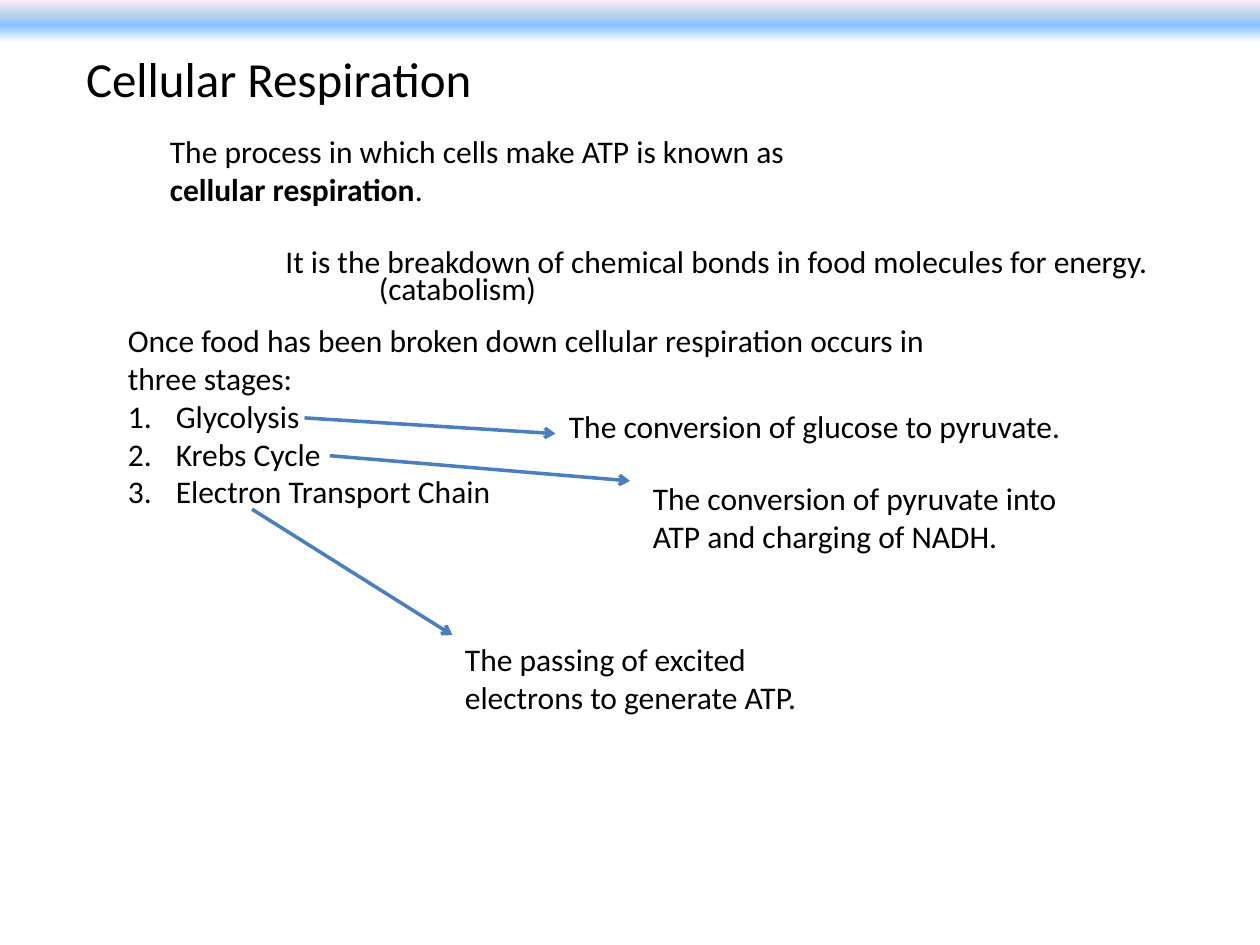
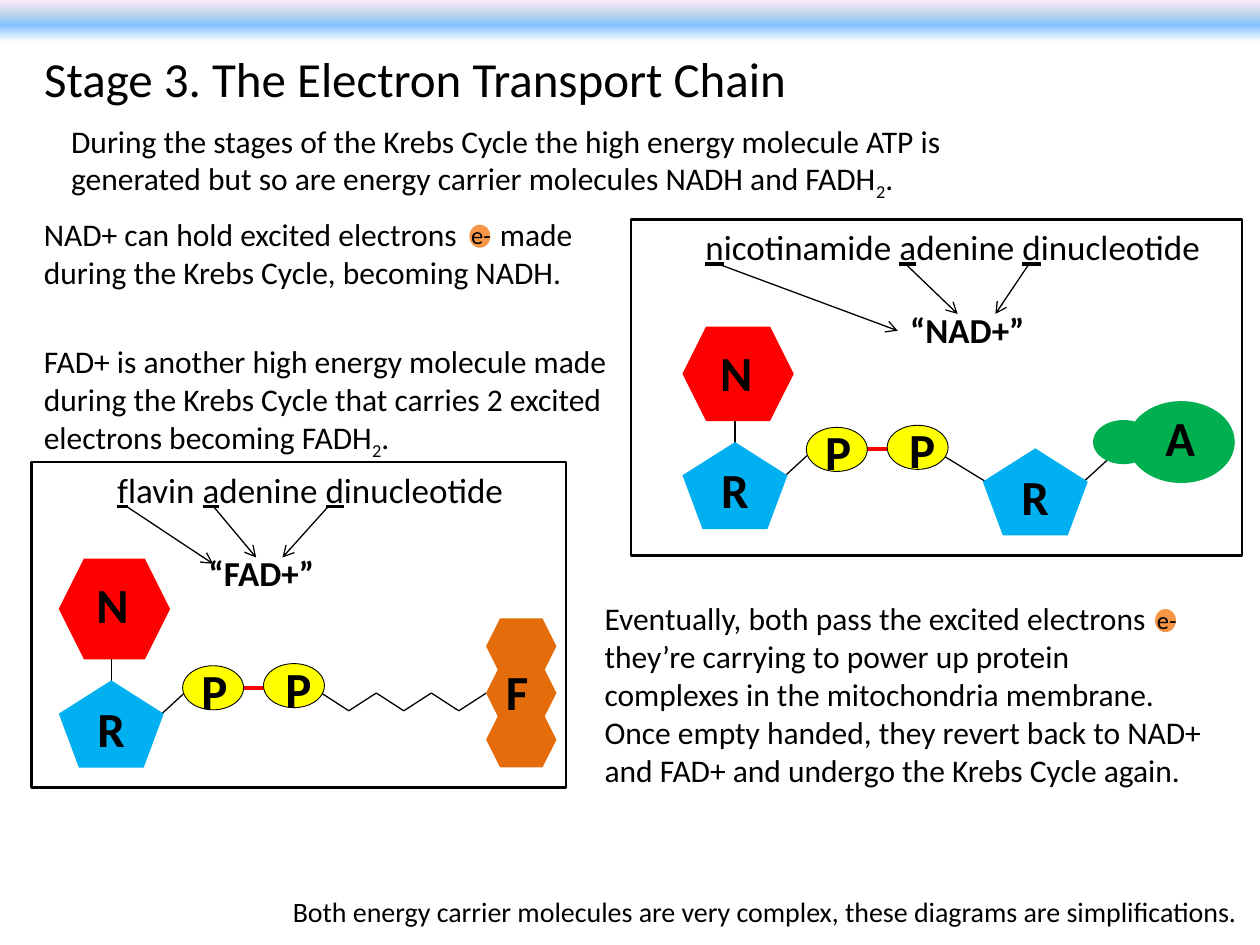
from lxml.etree import SubElement as Sub
from pptx import Presentation
from pptx.dml.color import RGBColor
from pptx.enum.shapes import MSO_CONNECTOR as Line, MSO_SHAPE as Kind
from pptx.enum.text import MSO_ANCHOR as Anchor, MSO_AUTO_SIZE as Fit, PP_ALIGN as Align
from pptx.oxml.ns import qn
from pptx.util import Inches, Pt

COLS, ROWS = 120, 90
WIDE, HIGH = Inches(10), Inches(7.5)
FONT = "Calibri"
BLACK, BLUE, RED, CYAN = "000000", "4B7EBC", "FF0000", "00B0F0"
YELLOW, GREEN, RUST, PEACH = "FFFF00", "00B050", "E46C0A", "F79646"
FADE = [(0, "FFFFFF"), (40, "85C2FF"), (70, "C4D6EB"), (100, "FFEBFA")]


def color(code):
    """Turn a hex string into a colour."""
    return RGBColor.from_string(code)


def place(x, y, w, h):
    """Turn grid columns and rows into slide lengths."""
    return [round(n * size) for n, size in
            ((x, WIDE / COLS), (y, HIGH / ROWS), (w, WIDE / COLS), (h, HIGH / ROWS))]


def write(para, runs, size, bold=False):
    """Add runs, each plain text or a (text, mark) pair."""
    for item in runs:
        text, mark = (item, "") if isinstance(item, str) else item
        run = para.add_run()
        run.text = text
        font = run.font
        font.name, font.size = FONT, Pt(size)
        font.color.rgb = color(BLACK)
        font.bold = bold or mark == "bold"
        font.underline = mark == "under"
        if mark == "sub":
            run._r.get_or_add_rPr().set("baseline", "-25000")


def say(slide, box, runs, size=18, bold=False):
    """Add a wrapped text box and return its frame."""
    frame = slide.shapes.add_textbox(*place(*box)).text_frame
    frame.word_wrap, frame.auto_size = True, Fit.SHAPE_TO_FIT_TEXT
    write(frame.paragraphs[0], runs, size, bold)
    return frame


def listing(frame, items):
    """Append a numbered list."""
    for item in items:
        para = frame.add_paragraph()
        write(para, [item], 18)
        props = para._p.get_or_add_pPr()
        props.set("marL", str(Inches(0.38)))
        props.set("indent", str(-Inches(0.38)))
        Sub(props, qn("a:buFont"), typeface="+mj-lt")
        Sub(props, qn("a:buAutoNum"), type="arabicPeriod")


def tab(frame, stop):
    """Set one tab stop on the first paragraph."""
    props = frame.paragraphs[0]._p.get_or_add_pPr()
    Sub(Sub(props, qn("a:tabLst")), qn("a:tab"), pos=str(Inches(stop)), algn="l")


def draw(slide, kind, box, fill=None, edge=0):
    """Add a flat shape with an optional fill and black edge."""
    shape = slide.shapes.add_shape(kind, *place(*box))
    shape.shadow.inherit = False
    if fill:
        shape.fill.solid()
        shape.fill.fore_color.rgb = color(fill)
    else:
        shape.fill.background()
    if edge:
        shape.line.color.rgb = color(BLACK)
        shape.line.width = Pt(edge)
    else:
        shape.line.fill.background()
    return shape


def link(slide, x1, y1, x2, y2, tint=BLACK, width=0.75, tip=False):
    """Add a straight line, with an open arrowhead if asked."""
    wire = slide.shapes.add_connector(Line.STRAIGHT, *place(x1, y1, x2, y2))
    wire.line.color.rgb = color(tint)
    wire.line.width = Pt(width)
    if tip:
        Sub(wire.line._get_or_add_ln(), qn("a:tailEnd"), type="arrow")
    Sub(wire._element.spPr, qn("a:effectLst"))


def letter(slide, x, y, text, w=5, h=6.8):
    """Add a big bold letter."""
    say(slide, (x, y, w, h), [text], 28, True)


def band(slide):
    """Add the fading band along the top."""
    strip = draw(slide, Kind.RECTANGLE, (0, 0, COLS, 4), BLUE)
    strip.fill.gradient()
    strip.fill.gradient_angle = 90
    stops = strip._element.spPr.find(".//" + qn("a:gsLst"))
    for old in list(stops):
        stops.remove(old)
    for share, code in FADE:
        stop = Sub(stops, qn("a:gs"), pos=str(share * 1000))
        Sub(stop, qn("a:srgbClr"), val=code)


def start(deck, text, x, w):
    """Add a slide with its band and title."""
    slide = deck.slides.add_slide(deck.slide_layouts[5])
    band(slide)
    title = slide.shapes.title
    title.left, title.top, title.width, title.height = place(x, 4, w, 6.8)
    frame = title.text_frame
    frame.word_wrap, frame.auto_size = True, Fit.SHAPE_TO_FIT_TEXT
    frame.vertical_anchor = Anchor.TOP
    frame.paragraphs[0].alignment = Align.LEFT
    write(frame.paragraphs[0], [text], 28)
    return slide


def sugar(slide, x, y):
    """Add a ribose pentagon."""
    draw(slide, Kind.REGULAR_PENTAGON, (x, y, 10, 8.3), CYAN)
    letter(slide, x + 2.5, y + 1.1, "R")


def core(slide, x, y, tall):
    """Add the base, sugar and two phosphates that both carriers share."""
    link(slide, x + 8.7, y + 4.2, x + 12.4, y + 0.8)
    link(slide, x + 17.6, y + 0.7, x + 21.3, y + 0.7, RED, 2.25)
    for dx, dy, shift in ((11.8, -1.4, 0.6), (19.5, -1.6, 0.9)):
        draw(slide, Kind.OVAL, (x + dx, y + dy, 5.8, 4.2), YELLOW, 0.5)
        letter(slide, x + dx + shift, y + dy - 1.1, "P", h=3.8)
    link(slide, x + 5, y + 1.6, x + 5, y - 4.3)
    draw(slide, Kind.HEXAGON, (x, y - 2 - tall, 10.6, tall), RED)
    letter(slide, x + 2.4, y - 1.1 - tall, "N")
    sugar(slide, x, y)


def adenine(slide, x, y):
    """Add the second sugar and the adenine end."""
    link(slide, x + 29.9, y + 22.6, x + 35.3, y + 25.9)
    link(slide, x + 42.1, y + 25.9, x + 45.7, y + 22.6)
    sugar(slide, x + 33.5, y + 21.8)
    draw(slide, Kind.OVAL, (x + 47.3, y + 17.3, 10.2, 7.8), GREEN)
    draw(slide, Kind.OVAL, (x + 44, y + 19.1, 5.8, 4.2), GREEN)
    letter(slide, x + 49.7, y + 17.3, "A")


def flavin(slide, x, y):
    """Add the zigzag chain and the flavin end."""
    step, ends = 2.62, (22, 23.7)
    for i in range(6):
        left = x + 27.6 + i * step
        link(slide, left, y + ends[i % 2], left + step, y + ends[(i + 1) % 2])
    for i in range(3):
        draw(slide, Kind.HEXAGON, (x + 43.3, y + 14.9 + i * 4.45, 6.7, 5.3), RUST)
    letter(slide, x + 44, y + 18.4, "F")


def panel(slide, box, words, name, label, rays, base, tail):
    """Add a framed carrier: its name, short form and diagram."""
    x, y = box[:2]
    tail(slide, x, y)
    core(slide, x + base[0], y + base[1], base[2])
    runs = []
    for word in words:
        runs += [(word[0], "under"), word[1:]]
    say(slide, (x + name[0], y, name[1], 5.3), runs, 20)
    say(slide, (x + label[0], y + 7.9, 18.5, 5.3), [label[1]], 20, True)
    for x1, y1, x2, y2 in rays:
        link(slide, x + x1, y + y1, x + x2, y + y2, tip=True)
    draw(slide, Kind.RECTANGLE, box, edge=1.5)


def spark(slide, x, y):
    """Add an excited electron."""
    draw(slide, Kind.OVAL, (x, y, 2, 2.2), PEACH)
    say(slide, (x - 1, y - 1, 5, 4), ["e-"], 14)


def stages(deck):
    """Build the overview of the three stages."""
    slide = start(deck, "Cellular Respiration", 7, 53)
    say(slide, (15, 12, 62, 8.5), ["The process in which cells make ATP is known as ",
                                   ("cellular respiration", "bold"), "."])
    say(slide, (26, 22.5, 86, 4.8),
        ["It is the breakdown of chemical bonds in food molecules for energy."])
    say(slide, (34.9, 25, 18, 4.8), ["(catabolism)"])
    frame = say(slide, (11, 30, 80, 19.4), [
        "Once food has been broken down cellular respiration occurs in three stages:"])
    listing(frame, ["Glycolysis", "Krebs Cycle", "Electron Transport Chain"])
    notes = [
        ((29, 39.8, 52.9, 41.3), (53, 38.2, 51, 4.8),
         "The conversion of glucose to pyruvate."),
        ((31.4, 43.4, 60, 45.8), (61, 45, 43, 8.5),
         "The conversion of pyruvate into ATP and charging of NADH."),
        ((24, 48.5, 43.1, 60.5), (43.1, 60.4, 35.5, 8.5),
         "The passing of excited electrons to generate ATP.")]
    for ray, box, text in notes:
        link(slide, *ray, BLUE, 2, True)
        say(slide, box, [text])


def chain(deck):
    """Build the slide on the electron carriers."""
    slide = start(deck, "Stage 3. The Electron Transport Chain", 3, 102)
    say(slide, (5.6, 11, 92.4, 8.5), [
        "During the stages of the Krebs Cycle the high energy molecule ATP is generated "
        "but so are energy carrier molecules NADH and FADH", ("2", "sub"), "."])
    panel(slide, (60.1, 20.9, 58.2, 32), ["nicotinamide ", "adenine ", "dinucleotide"],
          (5.9, 49.9), (25.4, "“NAD+”"),
          [(7.9, 4.1, 25.4, 10.6), (26, 4.1, 31.1, 9), (38, 4.1, 34.7, 9)],
          (4.9, 21.2, 9), adenine)
    say(slide, (26.7, 84.6, 93, 4.4), ["Both energy carrier molecules are very complex, "
                                       "these diagrams are simplifications."], 16)
    frame = say(slide, (3, 19.9, 54, 8.5), [
        "NAD+ can hold excited electrons\tmade during the Krebs Cycle, becoming NADH."])
    tab(frame, 3.62)
    say(slide, (3, 32, 59.5, 12.1), [
        "FAD+ is another high energy molecule made during the Krebs Cycle that carries "
        "2 excited electrons becoming FADH", ("2", "sub"), "."])
    panel(slide, (3, 44, 50.9, 31), ["flavin ", "adenine ", "dinucleotide"],
          (7, 41), (15.7, "“FAD+”"),
          [(9, 4.2, 17.3, 9.7), (17.3, 4.2, 21.4, 9.1), (28.3, 4.2, 23.9, 9.1)],
          (2.6, 20.8, 9.6), flavin)
    say(slide, (56.4, 56.5, 60, 19.4), [
        "Eventually, both pass the excited electrons they’re carrying to power up protein "
        "complexes in the mitochondria membrane. Once empty handed, they revert back to "
        "NAD+ and FAD+ and undergo the Krebs Cycle again."])
    spark(slide, 110, 58)
    spark(slide, 44.7, 21.4)


def main():
    """Build and save both slides."""
    deck = Presentation()
    deck.slide_width, deck.slide_height = WIDE, HIGH
    stages(deck)
    chain(deck)
    deck.save("out.pptx")


if __name__ == "__main__":
    main()
